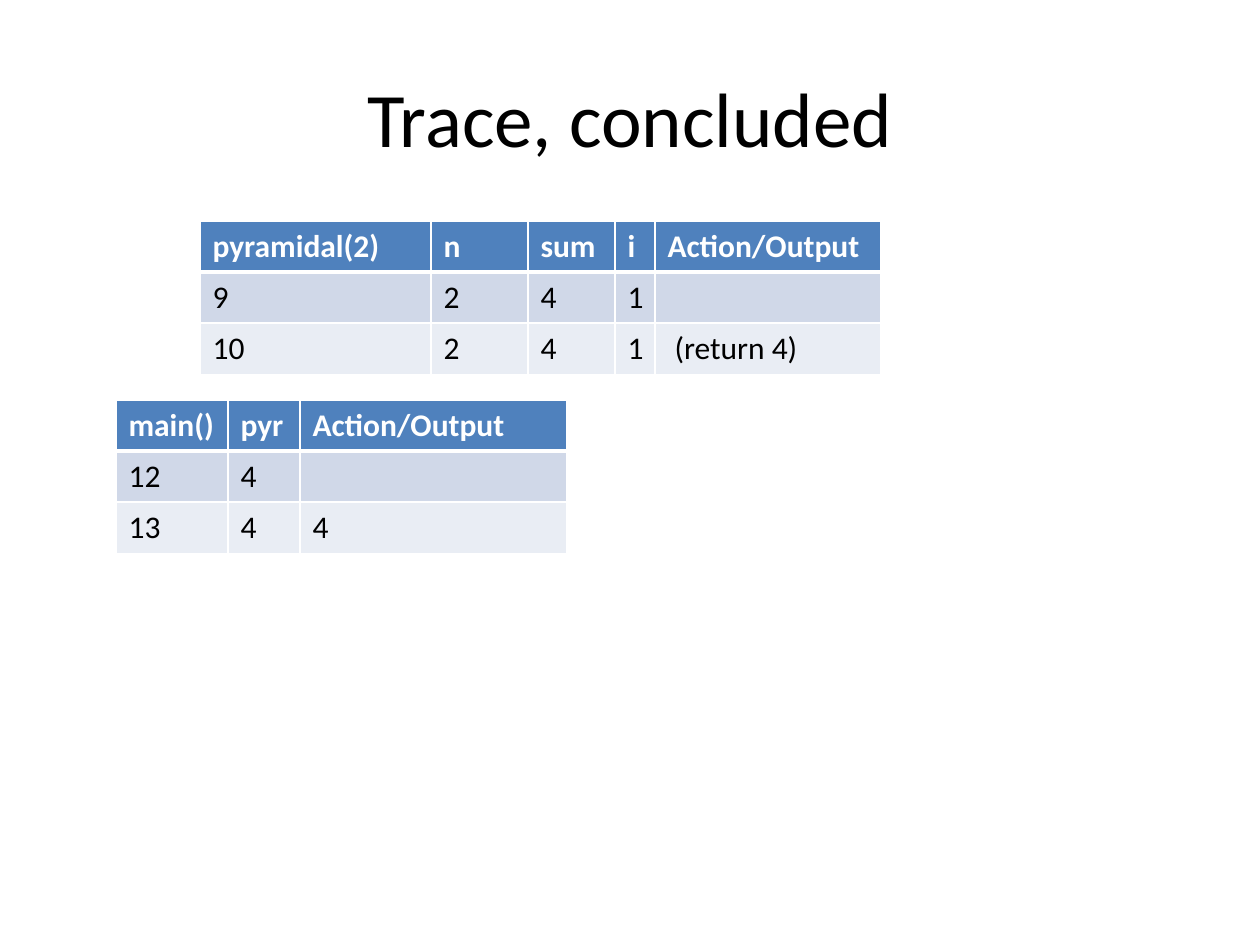
import dataclasses

import pptx
import pptx.dml.color
import pptx.enum.text
import pptx.oxml
import pptx.oxml.ns
import pptx.util

PX = 914400 / 126  # EMU per px


@dataclasses.dataclass(frozen=True)
class Theme:
    font: str = "Calibri"
    title_size: int = 44
    cell_size: int = 18
    text: str = "000000"
    header_text: str = "FFFFFF"
    header_fill: str = "4F81BD"
    band_fills: tuple = ("D0D8E8", "E9EDF4")
    rule: str = "FFFFFF"
    rule_width: int = 1
    header_rule_width: int = 3


THEME = Theme()
ROW_HEIGHT = 51


def emu(px):
    return pptx.util.Emu(round(px * PX))


def rgb(color):
    return pptx.dml.color.RGBColor.from_string(color)


def format_text(frame, size, color, bold=False):
    for paragraph in frame.paragraphs:
        for run in paragraph.runs:
            run.font.name = THEME.font
            run.font.size = pptx.util.Pt(size)
            run.font.bold = bold
            run.font.color.rgb = rgb(color)


def add_rules(cell, bottom_width):
    """Draw the four borders of a cell."""
    properties = cell._tc.get_or_add_tcPr()
    widths = {side: THEME.rule_width for side in "LRT"} | {"B": bottom_width}
    for side, width in widths.items():
        properties.append(pptx.oxml.parse_xml(
            f'<a:ln{side} {pptx.oxml.ns.nsdecls("a")} w="{pptx.util.Pt(width)}">'
            f'<a:solidFill><a:srgbClr val="{THEME.rule}"/></a:solidFill></a:ln{side}>'))


def add_title(slide, box, wording):
    title = slide.shapes.title
    title.left, title.top, title.width, title.height = map(emu, box)
    title.text_frame.text = wording
    title.text_frame.vertical_anchor = pptx.enum.text.MSO_ANCHOR.MIDDLE
    title.text_frame.paragraphs[0].alignment = pptx.enum.text.PP_ALIGN.CENTER
    format_text(title.text_frame, THEME.title_size, THEME.text)


def add_trace(slide, left, top, columns, steps):
    """Place a trace table: a header row, then banded steps."""
    trace = slide.shapes.add_table(
        len(steps), len(columns), emu(left), emu(top),
        emu(sum(columns)), emu(ROW_HEIGHT * len(steps))).table
    for column, width in zip(trace.columns, columns):
        column.width = emu(width)
    for index, (row, step) in enumerate(zip(trace.rows, steps)):
        row.height = emu(ROW_HEIGHT)
        header = index == 0
        fill = THEME.header_fill if header else THEME.band_fills[(index - 1) % 2]
        for cell, wording in zip(row.cells, step):
            add_rules(cell, THEME.header_rule_width if header else THEME.rule_width)
            cell.fill.solid()
            cell.fill.fore_color.rgb = rgb(fill)
            cell.text_frame.text = wording
            format_text(cell.text_frame, THEME.cell_size,
                        THEME.header_text if header else THEME.text, header)


def main():
    deck = pptx.Presentation()
    deck.slide_width, deck.slide_height = emu(1260), emu(945)
    slide = deck.slides.add_slide(deck.slide_layouts[5])  # title only

    add_title(slide, (63, 38, 1134, 158), "Trace, concluded")

    # Last steps of the function call
    add_trace(slide, 200, 221, (231, 97, 87, 40, 226), (
        ("pyramidal(2)", "n", "sum", "i", "Action/Output"),
        ("9", "2", "4", "1", ""),
        ("10", "2", "4", "1", " (return 4)"),
    ))

    # Back in the caller
    add_trace(slide, 116, 400, (112, 72, 267), (
        ("main()", "pyr", "Action/Output"),
        ("12", "4", ""),
        ("13", "4", "4"),
    ))

    deck.save("out.pptx")


if __name__ == "__main__":
    main()
